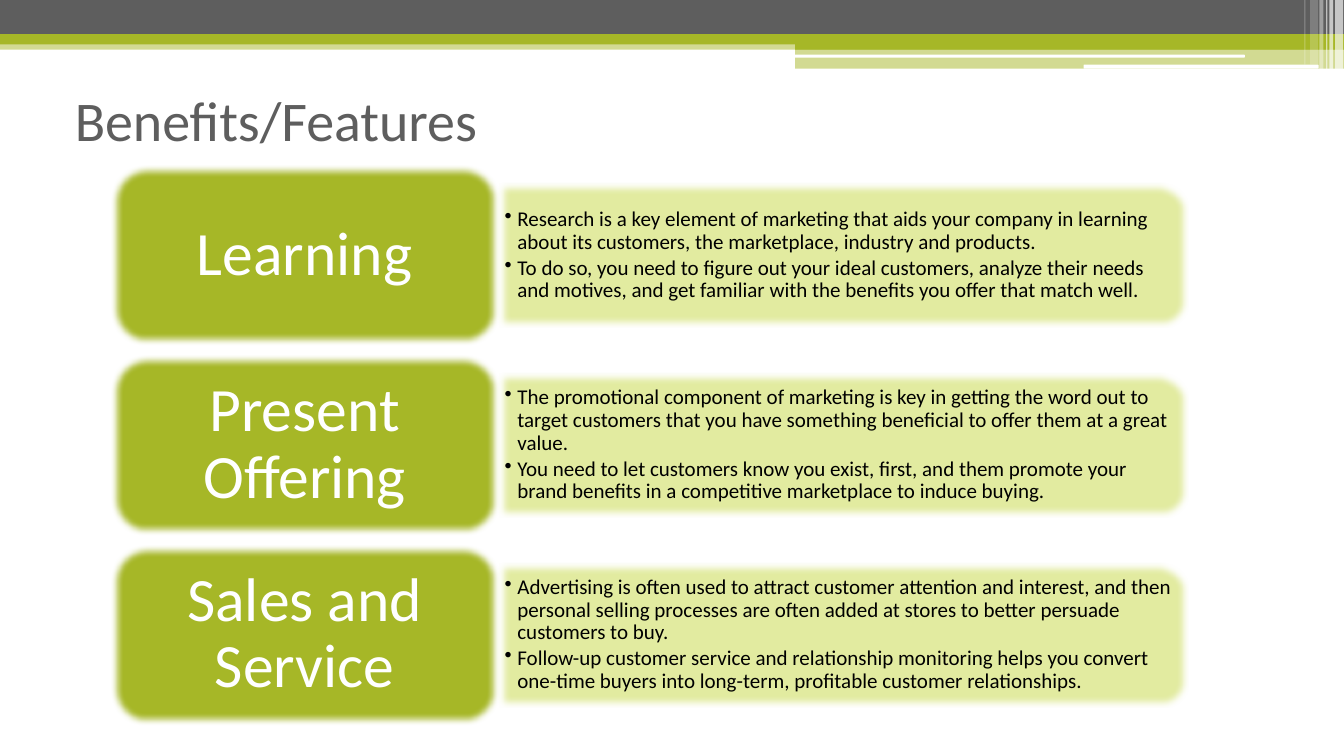
from dataclasses import dataclass

from lxml.etree import SubElement
from pptx import Presentation
from pptx.dml.color import RGBColor
from pptx.enum.shapes import MSO_SHAPE
from pptx.enum.text import MSO_ANCHOR, PP_ALIGN
from pptx.oxml.ns import qn
from pptx.util import Cm, Pt


@dataclass(frozen=True)
class Theme:
    font: str = "Calibri"
    green: str = "A6B727"
    pale: str = "E2EBA0"
    gray: str = "5E5E5E"
    white: str = "FFFFFF"
    black: str = "000000"
    title: int = 40
    label: int = 44
    body: int = 15


THEME = Theme()

BANDS = [
    (0, 1.02, 33.87, 0.23, THEME.green, 50),
    (0, 0, 33.87, 0.86, THEME.gray, 100),
    (0, 0.86, 33.87, 0.26, THEME.green, 100),
    (20.04, 0.99, 13.83, 0.26, THEME.green, 100),
    (20.04, 1.23, 13.83, 0.5, THEME.green, 50),
]
SLITS = [(20.02, 1.38, 11.35, 0.07), (27.31, 1.63, 5.92, 0.1)]
STRIPES = [
    (33.65, 0.2, 1.74, 65),
    (33.5, 0.1, 1.74, 65),
    (33.42, 0.03, 1.74, 60),
    (33.25, 0.1, 1.74, 40),
    (33.02, 0.2, 1.63, 20),
    (32.87, 0.03, 1.63, 30),
]

ROWS = [
    ("Learning", [
        "Research is a key element of marketing that aids your company in learning "
        "about its customers, the marketplace, industry and products.",
        "To do so, you need to figure out your ideal customers, analyze their needs "
        "and motives, and get familiar with the benefits you offer that match well.",
    ]),
    ("Present Offering", [
        "The promotional component of marketing is key in getting the word out to "
        "target customers that you have something beneficial to offer them at a great value.",
        "You need to let customers know you exist, first, and them promote your "
        "brand benefits in a competitive marketplace to induce buying.",
    ]),
    ("Sales and Service", [
        "Advertising is often used to attract customer attention and interest, and then "
        "personal selling processes are often added at stores to better persuade "
        "customers to buy.",
        "Follow-up customer service and relationship monitoring helps you convert "
        "one-time buyers into long-term, profitable customer relationships.",
    ]),
]

LEFT, TOP, PITCH = 2.79, 4.16, 4.78
CARD_W, CARD_H = 9.78, 4.55
PANEL_W, PANEL_H = 17.37, 3.63
NOTE_W, NOTE_H = 17.2, 3.28
INSET = 0.23


def add_block(slide, kind, box, color, alpha=100):
    shape = slide.shapes.add_shape(kind, *map(Cm, box))
    shape.shadow.inherit = False
    shape.fill.solid()
    shape.fill.fore_color.rgb = RGBColor.from_string(color)
    shape.line.fill.background()
    if alpha < 100:
        tint = shape.element.spPr.find(qn("a:solidFill")).find(qn("a:srgbClr"))
        SubElement(tint, qn("a:alpha"), val=str(alpha * 1000))
    return shape


def add_soft(slide, kind, box, color):
    shape = add_block(slide, kind, box, color)
    shape.line.color.rgb = RGBColor.from_string(THEME.green)
    shape.line.width = Pt(0.5)
    effects = shape.element.spPr.find(qn("a:effectLst"))
    SubElement(effects, qn("a:softEdge"), rad=str(Pt(5)))
    return shape


def style(para, size, color, align=PP_ALIGN.LEFT):
    para.alignment = align
    para.font.name = THEME.font
    para.font.size = Pt(size)
    para.font.color.rgb = RGBColor.from_string(color)


def add_text(slide, box, lines, size, color, align, inset):
    frame = slide.shapes.add_textbox(*map(Cm, box)).text_frame
    frame.word_wrap = True
    frame.vertical_anchor = MSO_ANCHOR.MIDDLE
    frame.margin_left = frame.margin_right = Cm(inset)
    frame.margin_top = frame.margin_bottom = Cm(inset / 2)
    frame.text = "\n".join(lines)
    for para in frame.paragraphs:
        style(para, size, color, align)
        para.line_spacing = 0.9
    return frame


def add_bullet(para):
    para.space_after = Pt(2.5)
    props = para._p.get_or_add_pPr()
    props.set("marL", str(Cm(0.32)))
    props.set("indent", str(Cm(-0.32)))
    mark = props.makeelement(qn("a:buChar"), {"char": "•"})
    props.find(qn("a:spcAft")).addnext(mark)


def add_header(slide):
    for *box, color, alpha in BANDS:
        add_block(slide, MSO_SHAPE.RECTANGLE, box, color, alpha)
    for box in SLITS:
        add_block(slide, MSO_SHAPE.ROUNDED_RECTANGLE, box, THEME.white)
    for left, width, height, alpha in STRIPES:
        add_block(slide, MSO_SHAPE.RECTANGLE, (left, 0, width, height), THEME.white, alpha)


def set_title(slide, text):
    title = slide.shapes.title
    title.left, title.top, title.width, title.height = map(Cm, (1.63, 1.83, 11.91, 2.34))
    title.text_frame.text = text
    title.text_frame.vertical_anchor = MSO_ANCHOR.MIDDLE
    style(title.text_frame.paragraphs[0], THEME.title, THEME.gray)


def add_panel(slide, left, middle, points):
    center = left + PANEL_W / 2
    box = (center - PANEL_H / 2, middle - PANEL_W / 2, PANEL_H, PANEL_W)
    panel = add_soft(slide, MSO_SHAPE.ROUND_2_SAME_RECTANGLE, box, THEME.pale)
    panel.rotation = 90
    box = (left, middle - NOTE_H / 2, NOTE_W, NOTE_H)
    frame = add_text(slide, box, points, THEME.body, THEME.black, PP_ALIGN.LEFT, 0.15)
    for para in frame.paragraphs:
        add_bullet(para)


def add_card(slide, left, top, label):
    box = (left, top, CARD_W, CARD_H)
    add_soft(slide, MSO_SHAPE.ROUNDED_RECTANGLE, box, THEME.green)
    box = (left + INSET, top + INSET, CARD_W - 2 * INSET, CARD_H - 2 * INSET)
    add_text(slide, box, [label], THEME.label, THEME.white, PP_ALIGN.CENTER, 0.46)


def main():
    deck = Presentation()
    deck.slide_width, deck.slide_height = Cm(33.87), Cm(19.05)
    slide = deck.slides.add_slide(deck.slide_layouts.get_by_name("Title Only"))
    add_header(slide)
    set_title(slide, "Benefits/Features")
    for index, (label, points) in enumerate(ROWS):
        top = TOP + index * PITCH
        add_panel(slide, LEFT + CARD_W, top + CARD_H / 2, points)
        add_card(slide, LEFT, top, label)
    deck.save("out.pptx")


if __name__ == "__main__":
    main()
